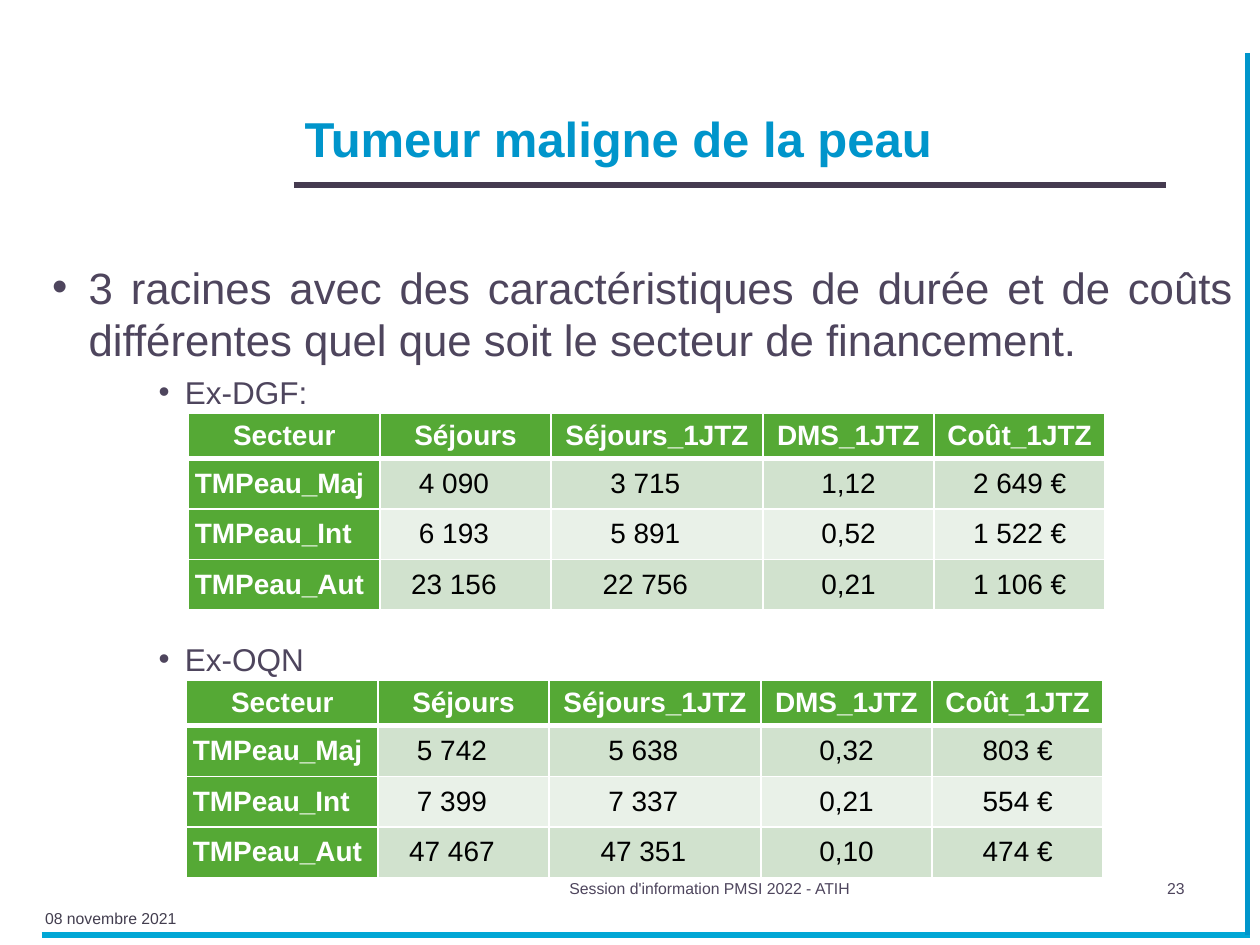
from lxml import etree
from pptx import Presentation
from pptx.dml.color import RGBColor
from pptx.enum.shapes import MSO_CONNECTOR
from pptx.enum.text import MSO_ANCHOR, PP_ALIGN
from pptx.oxml.ns import qn
from pptx.util import Cm, Pt

LEFT, CENTER, RIGHT, JUSTIFY = PP_ALIGN.LEFT, PP_ALIGN.CENTER, PP_ALIGN.RIGHT, PP_ALIGN.JUSTIFY
TOP, MIDDLE, BOTTOM = MSO_ANCHOR.TOP, MSO_ANCHOR.MIDDLE, MSO_ANCHOR.BOTTOM
STRAIGHT = MSO_CONNECTOR.STRAIGHT

WHITE = RGBColor(0xFF, 0xFF, 0xFF)
BLACK = RGBColor(0x00, 0x00, 0x00)
SKY = RGBColor(0x02, 0xA7, 0xD5)
BLUE = RGBColor(0x00, 0x95, 0xCB)
PLUM = RGBColor(0x45, 0x3B, 0x50)
TEXT = RGBColor(0x4E, 0x45, 0x5D)
DATE = RGBColor(0x43, 0x3E, 0x4F)
GREEN = RGBColor(0x55, 0xA9, 0x35)
BANDS = [RGBColor(0xD1, 0xE2, 0xCE), RGBColor(0xE9, 0xF1, 0xE8)]

HEADER = ["Secteur", "Séjours", "Séjours_1JTZ", "DMS_1JTZ", "Coût_1JTZ"]
EX_DGF = [
    ["TMPeau_Maj", "4 090", "3 715", "1,12", "2 649 €"],
    ["TMPeau_Int", "6 193", "5 891", "0,52", "1 522 €"],
    ["TMPeau_Aut", "23 156", "22 756", "0,21", "1 106 €"],
]
EX_OQN = [
    ["TMPeau_Maj", "5 742", "5 638", "0,32", "803 €"],
    ["TMPeau_Int", "7 399", "7 337", "0,21", "554 €"],
    ["TMPeau_Aut", "47 467", "47 351", "0,10", "474 €"],
]
COL_WIDTHS = [3.86, 3.45, 4.27, 3.45, 3.45]
ROW_HEIGHTS = [0.91, 1.02, 1.02, 1.02]
COUNT_COLS = (1, 2)

# text, size, left indent, hanging indent, space before
BULLETS = [
    ("3 racines avec des caractéristiques de durée et de coûts différentes "
     "quel que soit le secteur de financement.", 25, 1.24, 0.74, 0),
    ("Ex-DGF:", 18, 3.18, 0.53, 4),
    ("Ex-OQN", 18, 3.18, 0.53, 131),
]


def set_font(p, size, color, bold=False):
    values = {"name": "Arial", "size": Pt(size), "bold": bold}
    for r in p.runs:
        for name, value in values.items():
            setattr(r.font, name, value)
        r.font.color.rgb = color


def add_line(s, x1, y1, x2, y2, color):
    line = s.shapes.add_connector(STRAIGHT, Cm(x1), Cm(y1), Cm(x2), Cm(y2))
    line.line.color.rgb = color
    line.line.width = Pt(3)
    etree.SubElement(line._element.spPr, qn("a:effectLst"))


def add_frame(s, left, top, width, height, anchor=TOP):
    box = s.shapes.add_textbox(Cm(left), Cm(top), Cm(width), Cm(height))
    tf = box.text_frame
    tf.word_wrap = True
    tf.vertical_anchor = anchor
    return tf


def add_label(s, box, text, size, color, bold=False, align=LEFT, anchor=TOP):
    p = add_frame(s, *box, anchor).paragraphs[0]
    p.text = text
    p.alignment = align
    set_font(p, size, color, bold)


def add_bullets(s, box):
    tf = add_frame(s, *box)
    for i, (text, size, indent, hanging, before) in enumerate(BULLETS):
        p = tf.paragraphs[0] if i == 0 else tf.add_paragraph()
        p.text = text
        p.alignment = JUSTIFY
        p.space_before = Pt(before)
        pPr = p._p.get_or_add_pPr()
        pPr.set("marL", str(Cm(indent)))
        pPr.set("indent", str(-Cm(hanging)))
        etree.SubElement(pPr, qn("a:buFont"), typeface="Arial")
        etree.SubElement(pPr, qn("a:buChar"), char="•")
        set_font(p, size, TEXT)


def set_borders(cell, top, bottom):
    tcPr = cell._tc.get_or_add_tcPr()
    for side, width in {"L": 1, "R": 1, "T": top, "B": bottom}.items():
        ln = etree.SubElement(tcPr, qn(f"a:ln{side}"), w=str(Pt(width)))
        fill = etree.SubElement(ln, qn("a:solidFill"))
        etree.SubElement(fill, qn("a:srgbClr"), val=str(WHITE))


def fill_cell(cell, text, row, col):
    heading = row == 0 or col == 0
    set_borders(cell, 3 if row == 1 else 1, 3 if row == 0 else 1)
    cell.fill.solid()
    cell.fill.fore_color.rgb = GREEN if heading else BANDS[(row - 1) % 2]
    side = 0.13 if heading else 0.03
    # The counts sit slightly left of the column centre
    shift = 0.47 if col in COUNT_COLS and not heading else 0
    margins = {"left": side, "right": side + shift, "top": 0, "bottom": 0}
    for name, value in margins.items():
        setattr(cell, f"margin_{name}", Cm(value))
    cell.vertical_anchor = MIDDLE
    p = cell.text_frame.paragraphs[0]
    p.text = text
    p.alignment = LEFT if col == 0 and row > 0 else CENTER
    set_font(p, 16, WHITE if heading else BLACK, heading)


def add_sector_table(s, left, top, records):
    rows = [HEADER] + records
    table = s.shapes.add_table(len(rows), len(HEADER), Cm(left), Cm(top),
                               Cm(sum(COL_WIDTHS)), Cm(sum(ROW_HEIGHTS))).table
    table.first_row = table.horz_banding = False
    for column, width in zip(table.columns, COL_WIDTHS):
        column.width = Cm(width)
    for i, (row, height) in enumerate(zip(rows, ROW_HEIGHTS)):
        table.rows[i].height = Cm(height)
        for j, text in enumerate(row):
            fill_cell(table.cell(i, j), text, i, j)


def add_rules(s, right, bottom):
    """Draw the title rule and the two page edges that meet at the corner."""
    add_line(s, 5.92, 3.73, 23.5, 3.73, PLUM)
    add_line(s, 0.84, bottom, right + 0.05, bottom, SKY)
    add_line(s, right, bottom, right, 1.07, BLUE)


def add_footer(s, top):
    add_label(s, (19.48, top, 4.65, 1.12), "23", 9, TEXT, align=RIGHT)
    add_label(s, (0.66, top + 0.61, 4.24, 0.74), "08 novembre 2021", 9, DATE)
    add_label(s, (11.23, top, 8.05, 1.27), "Session d'information PMSI 2022 - ATIH", 9, TEXT)


def main():
    prs = Presentation()
    prs.slide_width, prs.slide_height = Cm(25.4), Cm(19.05)
    s = prs.slides.add_slide(prs.slide_layouts[6])
    add_rules(s, 25.15, 18.85)
    add_bullets(s, (0.3, 5.13, 24.8, 12.19))
    add_label(s, (5.89, 0.48, 17.2, 3.02), "Tumeur maligne de la peau", 28, BLUE,
              bold=True, anchor=BOTTOM)
    add_sector_table(s, 3.8, 8.33, EX_DGF)
    add_sector_table(s, 3.76, 13.72, EX_OQN)
    add_footer(s, 17.58)
    prs.save("out.pptx")


if __name__ == "__main__":
    main()
